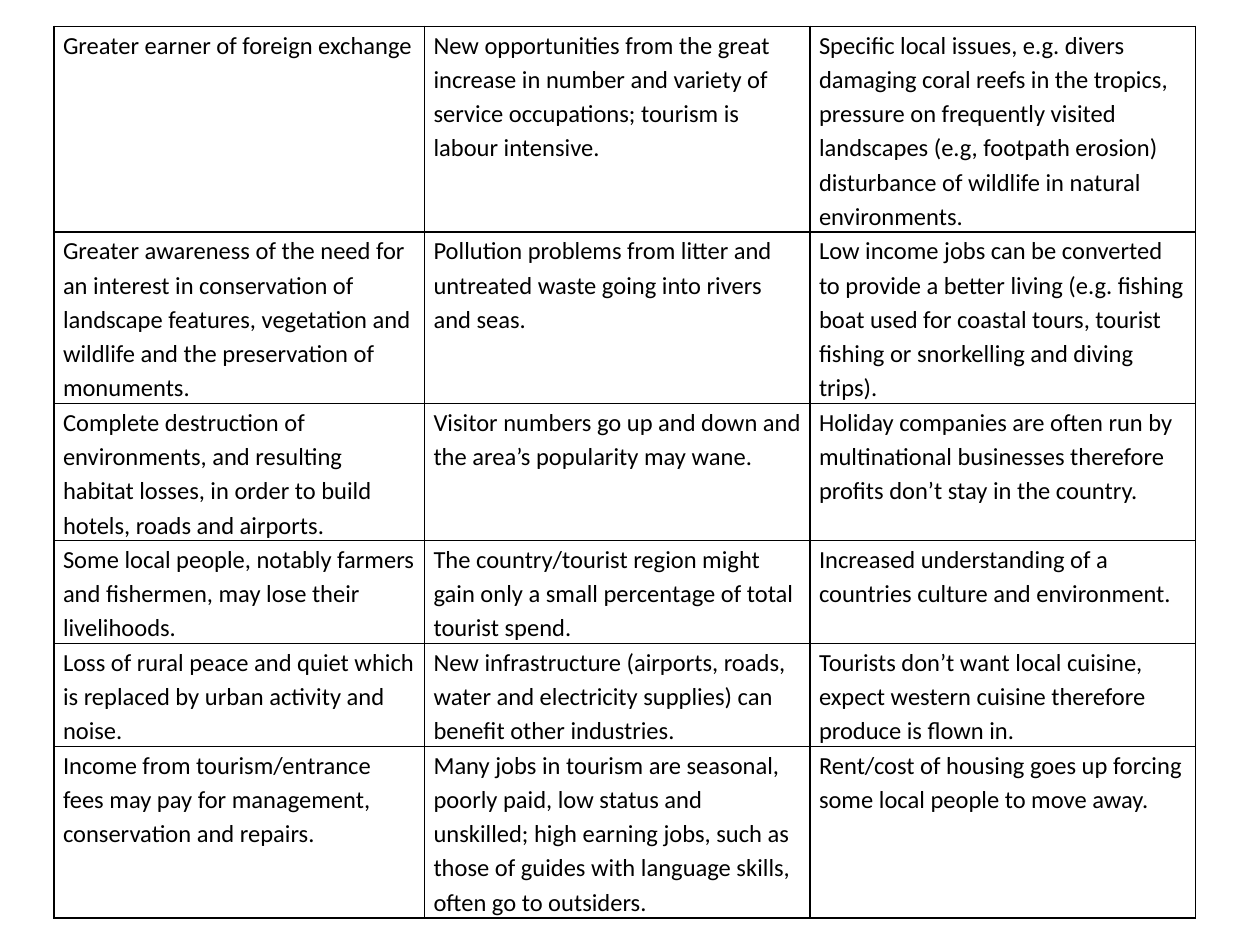
from dataclasses import dataclass

import pptx
import pptx.dml.color
import pptx.oxml
import pptx.oxml.ns
import pptx.table
import pptx.util

Cm = pptx.util.Cm
Pt = pptx.util.Pt

BLACK = pptx.dml.color.RGBColor(0x00, 0x00, 0x00)
FONT = "Calibri"
LINE_HEIGHT = 0.69
COLUMN_WIDTHS = (7.47, 7.77, 7.77)
CELL_INSET = Cm(0.18)
BORDER_WIDTH = Pt(1)


@dataclass
class ImpactRow:
    lines: int
    texts: tuple[str, str, str]


IMPACTS = [
    ImpactRow(6, (
        "Greater earner of foreign exchange",
        "New opportunities from the great increase in number and variety of "
        "service occupations; tourism is labour intensive.",
        "Specific local issues, e.g. divers damaging coral reefs in the tropics, "
        "pressure on frequently visited landscapes (e.g, footpath erosion) "
        "disturbance of wildlife in natural environments.",
    )),
    ImpactRow(5, (
        "Greater awareness of the need for an interest in conservation of "
        "landscape features, vegetation and wildlife and the preservation of "
        "monuments.",
        "Pollution problems from litter and untreated waste going into rivers "
        "and seas.",
        "Low income jobs can be converted to provide a better living (e.g. "
        "fishing boat used for coastal tours, tourist fishing or snorkelling "
        "and diving trips).",
    )),
    ImpactRow(4, (
        "Complete destruction of environments, and resulting habitat losses, "
        "in order to build hotels, roads and airports.",
        "Visitor numbers go up and down and the area’s popularity may wane.",
        "Holiday companies are often run by multinational businesses therefore "
        "profits don’t stay in the country.",
    )),
    ImpactRow(3, (
        "Some local people, notably farmers and fishermen, may lose their "
        "livelihoods.",
        "The country/tourist region might gain only a small percentage of total "
        "tourist spend.",
        "Increased understanding of a countries culture and environment.",
    )),
    ImpactRow(3, (
        "Loss of rural peace and quiet which is replaced by urban activity and "
        "noise.",
        "New infrastructure (airports, roads, water and electricity supplies) "
        "can benefit other industries.",
        "Tourists don’t want local cuisine, expect western cuisine therefore "
        "produce is flown in.",
    )),
    ImpactRow(5, (
        "Income from tourism/entrance fees may pay for management, conservation "
        "and repairs.",
        "Many jobs in tourism are seasonal, poorly paid, low status and "
        "unskilled; high earning jobs, such as those of guides with language "
        "skills, often go to outsiders.",
        "Rent/cost of housing goes up forcing some local people to move away.",
    )),
]


def add_borders(cell: pptx.table._Cell) -> None:
    tc_pr = cell._tc.get_or_add_tcPr()
    for side in ("lnL", "lnR", "lnT", "lnB"):
        tc_pr.append(pptx.oxml.parse_xml(
            f'<a:{side} {pptx.oxml.ns.nsdecls("a")} w="{BORDER_WIDTH}">'
            f'<a:solidFill><a:srgbClr val="{BLACK}"/></a:solidFill></a:{side}>'
        ))


def fill_cell(cell: pptx.table._Cell, text: str) -> None:
    add_borders(cell)
    cell.fill.background()
    cell.margin_left = cell.margin_right = CELL_INSET
    cell.margin_top = cell.margin_bottom = 0
    cell.text_frame.text = text
    p = cell.text_frame.paragraphs[0]
    p.line_spacing = 1.15
    r = p.runs[0]
    r.font.name = FONT
    r.font.size = Pt(14)
    r.font.color.rgb = BLACK


def add_impact_table(s: pptx.slide.Slide, impacts: list[ImpactRow]) -> None:
    height = LINE_HEIGHT * sum(impact.lines for impact in impacts)
    table = s.shapes.add_table(
        len(impacts), len(COLUMN_WIDTHS),
        Cm(1.09), Cm(0.53), Cm(sum(COLUMN_WIDTHS)), Cm(height),
    ).table
    table.first_row = False
    table.horz_banding = False
    for column, width in zip(table.columns, COLUMN_WIDTHS):
        column.width = Cm(width)
    for row, impact in zip(table.rows, impacts):
        row.height = Cm(LINE_HEIGHT * impact.lines)
        for cell, text in zip(row.cells, impact.texts):
            fill_cell(cell, text)


def main() -> None:
    prs = pptx.Presentation()
    prs.slide_width = Cm(25.4)
    prs.slide_height = Cm(19.05)
    s = prs.slides.add_slide(prs.slide_layouts[6])
    add_impact_table(s, IMPACTS)
    prs.save("out.pptx")


if __name__ == "__main__":
    main()
